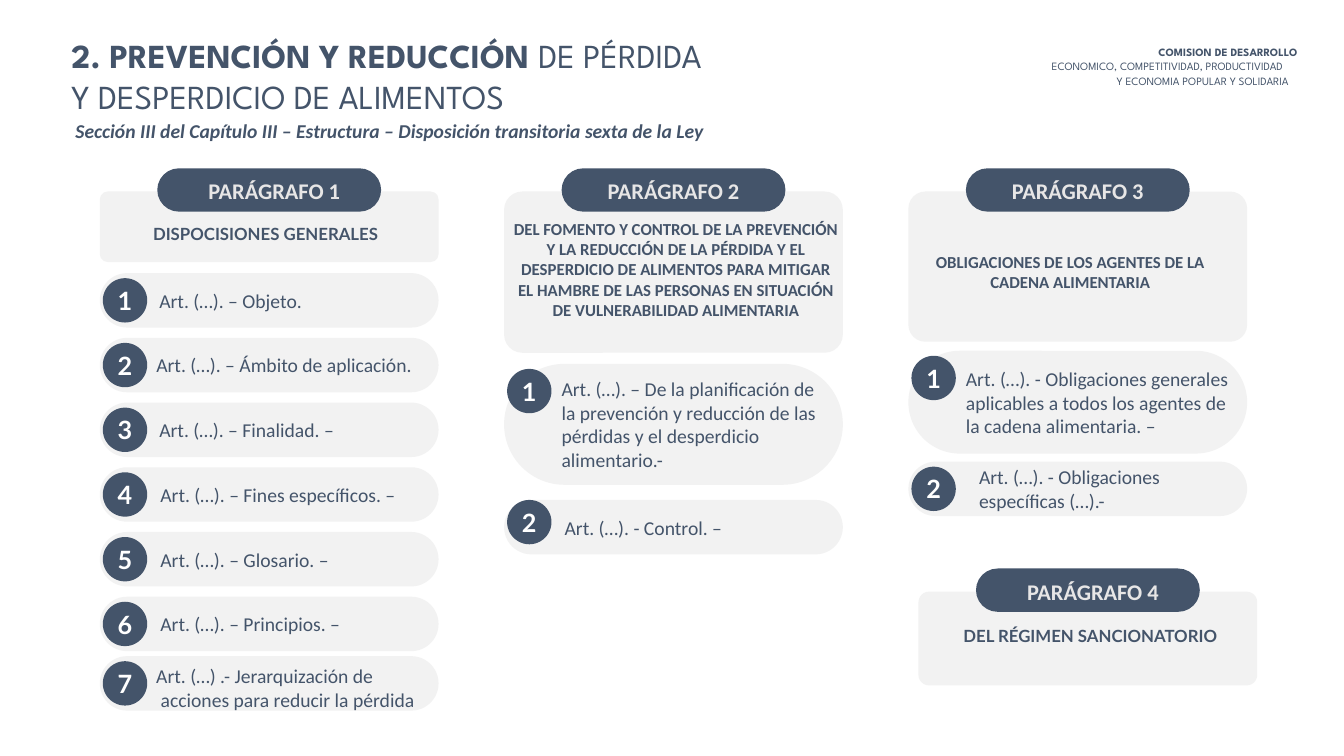
from dataclasses import dataclass

from pptx import Presentation
from pptx.dml.color import RGBColor
from pptx.enum.shapes import MSO_SHAPE
from pptx.enum.text import MSO_ANCHOR, MSO_AUTO_SIZE, PP_ALIGN
from pptx.util import Inches, Pt

ROUNDED = MSO_SHAPE.ROUNDED_RECTANGLE
OVAL = MSO_SHAPE.OVAL
TOP = MSO_ANCHOR.TOP
MIDDLE = MSO_ANCHOR.MIDDLE
GROW = MSO_AUTO_SIZE.SHAPE_TO_FIT_TEXT
FIXED = MSO_AUTO_SIZE.NONE
LEFT = PP_ALIGN.LEFT
CENTER = PP_ALIGN.CENTER

CARD_WIDTH = 3.36
PILL_WIDTH = 2.22
PILL_HEIGHT = 0.43
BADGE_SIZE = 0.44
NUMBER_SIZE = 0.3
ITEM_HEIGHT = 0.54
LINE_HEIGHT = 0.235


@dataclass(frozen=True)
class Theme:
    navy: RGBColor = RGBColor(0x44, 0x54, 0x6A)
    pale: RGBColor = RGBColor(0xF2, 0xF2, 0xF2)
    label: RGBColor = RGBColor(0xE7, 0xE6, 0xE6)
    white: RGBColor = RGBColor(0xFF, 0xFF, 0xFF)
    body_font: str = "Calibri"
    accent_font: str = "Lato"
    title_font: str = "League Spartan"
    title_size: int = 24
    number_size: int = 18
    label_size: int = 16
    body_size: int = 14
    heading_size: int = 12
    committee_size: int = 8


class SlideBuilder:
    def __init__(self, slide, theme):
        self.slide = slide
        self.theme = theme

    def block(self, kind, left, top, width, height, color, rounding=None):
        shape = self.slide.shapes.add_shape(
            kind, Inches(left), Inches(top), Inches(width), Inches(height))
        shape.shadow.inherit = False
        shape.fill.solid()
        shape.fill.fore_color.rgb = color
        shape.line.fill.background()
        if rounding is not None:
            shape.adjustments[0] = rounding

    def text(self, left, top, width, height, content, size, font=None, color=None,
             bold=False, italic=False, align=LEFT, anchor=MIDDLE,
             inset=False, wrap=True, auto_size=GROW):
        shape = self.slide.shapes.add_textbox(
            Inches(left), Inches(top), Inches(width), Inches(height))
        frame = shape.text_frame
        frame.text = content
        frame.word_wrap = wrap
        frame.auto_size = auto_size
        frame.vertical_anchor = anchor
        if not inset:
            frame.margin_left = frame.margin_right = 0
            frame.margin_top = frame.margin_bottom = 0
        for paragraph in frame.paragraphs:
            paragraph.alignment = align
            for run in paragraph.runs:
                self.style(run, size, font or self.theme.body_font,
                           color or self.theme.navy, bold, italic)
        return frame

    def style(self, run, size, font, color, bold=False, italic=False):
        run.font.size = Pt(size)
        run.font.name = font
        run.font.color.rgb = color
        run.font.bold = bold
        run.font.italic = italic

    def title(self, strong, light):
        theme = self.theme
        frame = self.text(0.61, 0.31, 6.59, 0.88, strong, theme.title_size,
                          theme.title_font, bold=True, inset=True, auto_size=FIXED)
        run = frame.paragraphs[0].add_run()
        run.text = light
        self.style(run, theme.title_size, theme.title_font, theme.navy)

    def section(self, left, top, height, label, label_shift, heading, heading_box, font):
        theme = self.theme
        pill_left = left + (CARD_WIDTH - PILL_WIDTH) / 2
        pill_top = top - 0.23
        self.block(ROUNDED, left, top, CARD_WIDTH, height, theme.pale, 0.113)
        self.block(ROUNDED, pill_left, pill_top, PILL_WIDTH, PILL_HEIGHT, theme.navy, 0.5)
        self.text(pill_left + 0.19 + label_shift, pill_top + 0.09, 1.84, 0.27, label,
                  theme.label_size, color=theme.label, bold=True, align=CENTER)
        self.text(*heading_box, heading, theme.heading_size, font,
                  bold=True, align=CENTER, anchor=TOP)

    def item(self, left, top, number, content, text_left, text_width,
             lines=1, height=ITEM_HEIGHT, badge_drop=0.05, text_drop=0):
        theme = self.theme
        badge_left = left + 0.03
        badge_top = top + badge_drop
        margin = (BADGE_SIZE - NUMBER_SIZE) / 2
        text_height = LINE_HEIGHT * lines
        text_top = top + (height - text_height) / 2 + text_drop
        self.block(ROUNDED, left, top, CARD_WIDTH, height, theme.pale, 0.5)
        self.block(OVAL, badge_left, badge_top, BADGE_SIZE, BADGE_SIZE, theme.navy)
        self.text(badge_left + margin, badge_top + margin, NUMBER_SIZE, NUMBER_SIZE,
                  str(number), theme.number_size, theme.accent_font, theme.white,
                  bold=True, align=CENTER)
        self.text(text_left, text_top, text_width, text_height, content, theme.body_size)


def main():
    presentation = Presentation()
    presentation.slide_width = Inches(13.33)
    presentation.slide_height = Inches(7.5)
    slide = presentation.slides.add_slide(presentation.slide_layouts[6])
    theme = Theme()
    builder = SlideBuilder(slide, theme)

    builder.title("2. PREVENCIÓN Y REDUCCIÓN ", "DE PÉRDIDA Y DESPERDICIO DE ALIMENTOS")
    builder.text(0.65, 1.13, 6.48, 0.34,
                 "Sección III del Capítulo III – Estructura – Disposición transitoria sexta de la Ley",
                 theme.body_size, bold=True, italic=True, anchor=TOP, inset=True, wrap=False)

    committee = [
        (11.34, 0.4, 1.68, "COMISION DE DESARROLLO", True),
        (10.13, 0.54, 2.9, "ECONOMICO, COMPETITIVIDAD, PRODUCTIVIDAD", False),
        (10.84, 0.69, 2.18, "Y ECONOMIA POPULAR Y SOLIDARIA", False),
    ]
    for left, top, width, content, bold in committee:
        builder.text(left, top, width, 0.24, content, theme.committee_size, theme.title_font,
                     bold=bold, align=CENTER, anchor=TOP, inset=True, wrap=False)

    first, second, third = 0.99, 5, 9.01
    sections = [
        (first, 1.9, 0.7, "PARÁGRAFO 1", 0.05, "DISPOCISIONES GENERALES",
         (1.21, 2.22, 2.85, 0.2), theme.accent_font),
        (second, 1.9, 1.6, "PARÁGRAFO 2", 0,
         "DEL FOMENTO Y CONTROL DE LA PREVENCIÓN Y LA REDUCCIÓN DE LA PÉRDIDA Y EL "
         "DESPERDICIO DE ALIMENTOS PARA MITIGAR EL HAMBRE DE LAS PERSONAS EN SITUACIÓN "
         "DE VULNERABILIDAD ALIMENTARIA",
         (5.09, 2.17, 3.23, 1.21), theme.body_font),
        (third, 1.9, 1.49, "PARÁGRAFO 3", 0,
         "OBLIGACIONES DE LOS AGENTES DE LA CADENA ALIMENTARIA",
         (9.27, 2.5, 2.69, 0.4), theme.body_font),
        (9.11, 5.87, 0.93, "PARÁGRAFO 4", 0.05, "DEL RÉGIMEN SANCIONATORIO",
         (9.36, 6.21, 2.91, 0.2), theme.accent_font),
    ]
    for section in sections:
        builder.section(*section)

    general_articles = [
        ("Art. (…). – Objeto.", 1.58),
        ("Art. (…). – Ámbito de aplicación.", 1.55),
        ("Art. (…). – Finalidad. –", 1.58),
        ("Art. (…). – Fines específicos. –", 1.59),
        ("Art. (…). – Glosario. –", 1.59),
        ("Art. (…). – Principios. –", 1.59),
    ]
    for index, (content, text_left) in enumerate(general_articles):
        builder.item(first, 2.71 + 0.642 * index, index + 1, content, text_left, 2.75)
    builder.item(first, 6.51, 7,
                 "Art. (…) .- Jerarquización de\n acciones para reducir la pérdida",
                 1.55, 3.36, lines=2, text_drop=0.04)

    builder.item(second, 3.61, 1,
                 "Art. (…). – De la planificación de la prevención y reducción de las "
                 "pérdidas y el desperdicio alimentario.-",
                 5.57, 2.64, lines=4, height=1.2)
    builder.item(second, 4.96, 2, "Art. (…). - Control. –", 5.6, 1.93, badge_drop=0,
                 text_drop=0.01)

    builder.item(third, 3.48, 1,
                 "Art. (…). - Obligaciones generales aplicables a todos los agentes de "
                 "la cadena alimentaria. –",
                 9.58, 2.61, lines=3, height=1.02)
    builder.item(third, 4.58, 2, "Art. (…). - Obligaciones específicas (…).-",
                 9.71, 2.68, lines=2)

    presentation.save("out.pptx")


if __name__ == "__main__":
    main()
